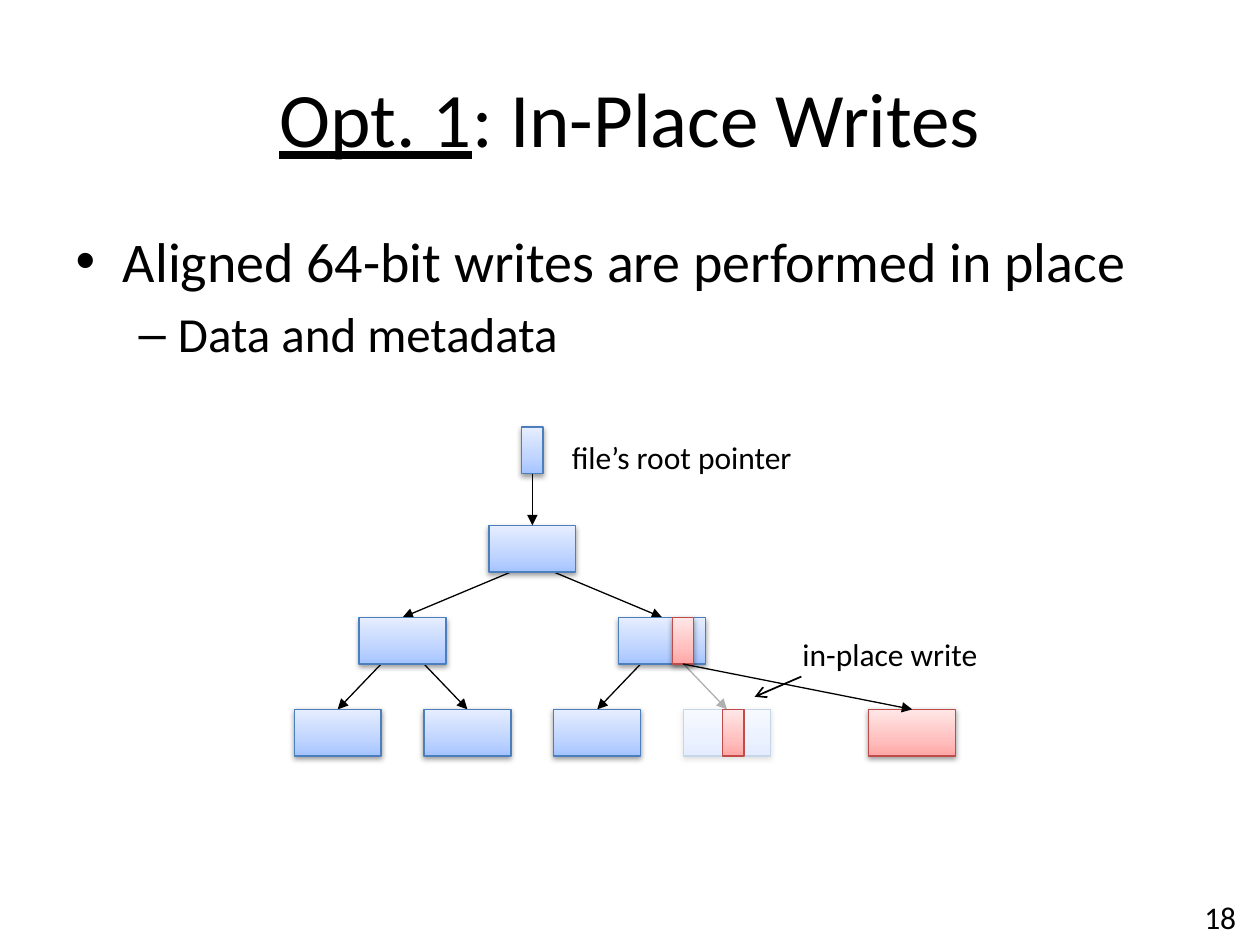
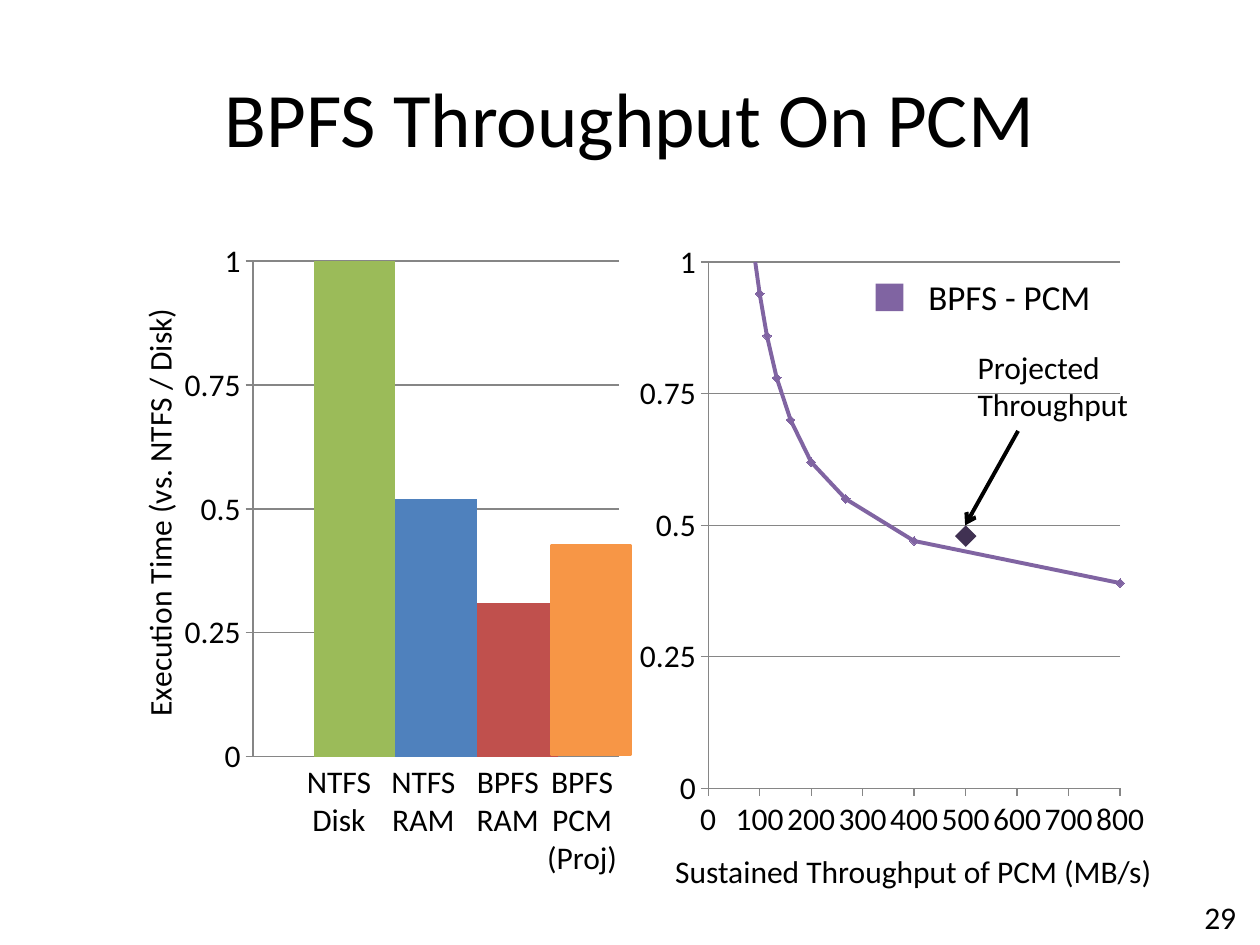
import pptx
import pptx.chart.data
import pptx.dml.color
import pptx.enum.chart
import pptx.enum.shapes
import pptx.enum.text
import pptx.oxml
import pptx.oxml.ns
import pptx.util

RGB = pptx.dml.color.RGBColor
Inches = pptx.util.Inches
Pt = pptx.util.Pt
qn = pptx.oxml.ns.qn
PRESET = pptx.enum.shapes.MSO_SHAPE
ALIGN = pptx.enum.text.PP_ALIGN

FONT = "Calibri"
BLACK = RGB(0x00, 0x00, 0x00)
WHITE = RGB(0xFF, 0xFF, 0xFF)
GRID_GRAY = RGB(0x86, 0x86, 0x86)
GREEN = RGB(0x9B, 0xBB, 0x59)
BLUE = RGB(0x4F, 0x81, 0xBD)
RED = RGB(0xC0, 0x50, 0x4D)
ORANGE = RGB(0xF7, 0x96, 0x46)
PURPLE = RGB(0x80, 0x64, 0xA2)
DARK_PURPLE = RGB(0x40, 0x31, 0x52)
BLUE_EDGE = RGB(0x4B, 0x7E, 0xBC)
RED_EDGE = RGB(0xBF, 0x4C, 0x48)
BLUE_BLOCK = ((RGB(0xA4, 0xC4, 0xFF), RGB(0xBF, 0xD4, 0xFF), RGB(0xE6, 0xEE, 0xFF)), BLUE_EDGE)
RED_BLOCK = ((RGB(0xFF, 0xA6, 0xA5), RGB(0xFF, 0xC0, 0xBF), RGB(0xFF, 0xE7, 0xE7)), RED_EDGE)
STOPS = (0, 35, 100)

# Grid of the block tree, in inches
LEAF_X, LEAF_STEP = 2.68, 1.03
LEVEL_Y, LEVEL_STEP = 4.17, 0.73
BLOCK_W, BLOCK_H, POINTER_W = 0.69, 0.37, 0.17
POINTER_OFFSET = 0.17

THROUGHPUT = (30, 40, 40, 40, 40, 40, 50, 50, 50, 60, 60, 70, 70, 80, 90, 100,
              114, 133, 160, 200, 267, 400, 800)
RELATIVE_TIME = (2.1, 2.03, 1.95, 1.87, 1.79, 1.71, 1.64, 1.56, 1.48, 1.4, 1.32, 1.25,
                 1.17, 1.09, 1.01, 0.94, 0.86, 0.78, 0.7, 0.62, 0.55, 0.47, 0.39)


def xml(tag, **attributes):
    """Make a DrawingML element from a tag such as a:alpha."""
    element = pptx.oxml.parse_xml(
        f'<{tag} xmlns:a="http://schemas.openxmlformats.org/drawingml/2006/main"'
        ' xmlns:c="http://schemas.openxmlformats.org/drawingml/2006/chart"/>')
    for key, value in attributes.items():
        element.set(key, str(value))
    return element


def child(parent, tag, **attributes):
    element = xml(tag, **attributes)
    parent.append(element)
    return element


def add_run(paragraph, text, size, underline=None):
    run = paragraph.add_run()
    run.text = text
    run.font.name = FONT
    run.font.size = Pt(size)
    run.font.color.rgb = BLACK
    run.font.underline = underline


def add_label(slide, box, lines, size=18, align=ALIGN.LEFT, wrap=False):
    label = slide.shapes.add_textbox(*map(Inches, box))
    frame = label.text_frame
    frame.word_wrap = wrap
    if not wrap:
        frame.auto_size = pptx.enum.text.MSO_AUTO_SIZE.SHAPE_TO_FIT_TEXT
    for i, line in enumerate(lines):
        paragraph = frame.add_paragraph() if i else frame.paragraphs[0]
        paragraph.alignment = align
        add_run(paragraph, line, size)


def add_titled_slide(deck, layout, title_runs, page):
    slide = deck.slides.add_slide(deck.slide_layouts[layout])
    paragraph = slide.shapes.title.text_frame.paragraphs[0]
    for text, underline in title_runs:
        add_run(paragraph, text, 44, underline)
    add_label(slide, (7.58, 7.08, 2.33, 0.4), [page], align=ALIGN.RIGHT, wrap=True)
    return slide


def add_flat(slide, box, color, preset=PRESET.RECTANGLE):
    shape = slide.shapes.add_shape(preset, *map(Inches, box))
    shape.shadow.inherit = False
    shape.fill.solid()
    shape.fill.fore_color.rgb = color
    shape.line.fill.background()
    return shape


def add_block(slide, center, top, style=BLUE_BLOCK, width=BLOCK_W, shadow=True):
    """Add a tree block with an upward gradient, centred on a grid column."""
    shades, edge = style
    block = add_flat(slide, (center - width / 2, top, width, BLOCK_H), WHITE)
    block.fill.gradient()
    block.fill.gradient_angle = 90
    stop_list = block.element.spPr.find(".//" + qn("a:gsLst"))
    for stop in list(stop_list):
        stop_list.remove(stop)
    for position, shade in zip(STOPS, shades):
        stop = child(stop_list, "a:gs", pos=position * 1000)
        child(stop, "a:srgbClr", val=shade)
    block.line.color.rgb = edge
    block.line.width = Pt(0.75)
    if shadow:
        effects = block.element.spPr.find(qn("a:effectLst"))
        outer = child(effects, "a:outerShdw", blurRad=Pt(3.1), dist=Pt(1.6),
                      dir=5400000, rotWithShape=0)
        child(child(outer, "a:srgbClr", val=BLACK), "a:alpha", val=38000)


def add_arrow(slide, start, end, width=0.75, head="triangle"):
    arrow = slide.shapes.add_connector(
        pptx.enum.shapes.MSO_CONNECTOR.STRAIGHT, *map(Inches, (*start, *end)))
    arrow.line.color.rgb = BLACK
    arrow.line.width = Pt(width)
    properties = arrow.element.spPr
    child(properties.find(qn("a:ln")), "a:tailEnd", type=head)
    child(properties, "a:effectLst")


def leaf_x(column):
    return LEAF_X + LEAF_STEP * column


def level_y(level):
    return LEVEL_Y + LEVEL_STEP * level


def add_branch(slide, parent, target, level):
    """Point from a block on a level to a block on the next level."""
    side = POINTER_OFFSET if target > parent else -POINTER_OFFSET
    add_arrow(slide, (leaf_x(parent) + side, level_y(level) + BLOCK_H),
              (leaf_x(target), level_y(level + 1)))


def set_layout(parent, index, **shares):
    """Place a chart part by shares of the chart's size."""
    for old in parent.findall(qn("c:layout")):
        parent.remove(old)
    layout = xml("c:layout")
    parent.insert(index, layout)
    manual = child(layout, "c:manualLayout")
    if "w" in shares:
        child(manual, "c:layoutTarget", val="inner")
    for mode in ("xMode", "yMode"):
        child(manual, "c:" + mode, val="edge")
    for key, share in shares.items():
        child(manual, "c:" + key, val=share)


def style_axis(axis, maximum, unit, gridlines):
    axis.minimum_scale, axis.maximum_scale = 0, maximum
    axis.major_unit = unit
    axis.has_major_gridlines = gridlines
    if gridlines:
        axis.major_gridlines.format.line.color.rgb = GRID_GRAY
    axis.major_tick_mark = pptx.enum.chart.XL_TICK_MARK.OUTSIDE
    axis.format.line.color.rgb = GRID_GRAY
    axis.tick_labels.number_format = "General"
    axis.tick_labels.number_format_is_linked = False
    axis.tick_labels.font.size = Pt(18)


def add_plot(slide, kind, box, data, **plot_shares):
    chart = slide.shapes.add_chart(kind, *map(Inches, box), data).chart
    chart.has_legend = chart.has_title = False
    chart.font.name, chart.font.size = FONT, Pt(10)
    chart.font.color.rgb = BLACK
    chart.plots[0].vary_by_categories = False
    style_axis(chart.value_axis, 1, 0.25, True)
    set_layout(chart.element.find(".//" + qn("c:plotArea")), 0, **plot_shares)
    return chart


def add_time_bars(slide):
    data = pptx.chart.data.CategoryChartData()
    data.categories = ["1"]
    bars = ((1, GREEN), (0.52, BLUE), (0.31, RED))
    for i, (value, _) in enumerate(bars, 1):
        data.add_series(f"Series {i}", [value])
    chart = add_plot(slide, pptx.enum.chart.XL_CHART_TYPE.COLUMN_CLUSTERED,
                     (0.75, 1.83, 4.25, 4.42), data, x=0.296, y=0.055, w=0.684, h=0.89)
    chart.plots[0].gap_width, chart.plots[0].overlap = 150, 0
    chart.category_axis.visible = False
    for series, (_, color) in zip(chart.plots[0].series, bars):
        series.format.fill.solid()
        series.format.fill.fore_color.rgb = color
    title = chart.value_axis.axis_title
    paragraph = title.text_frame.paragraphs[0]
    add_run(paragraph, "Execution Time (vs. NTFS / Disk)", 18)
    paragraph.runs[0].font.bold = False
    title.element.find(".//" + qn("a:bodyPr")).set("rot", "-5400000")
    set_layout(title.element, 1, x=0.07, y=0.13)


def add_throughput_curve(slide):
    data = pptx.chart.data.XyChartData()
    points = data.add_series("Series 1")
    for x, y in zip(THROUGHPUT, RELATIVE_TIME):
        points.add_data_point(x, y)
    chart = add_plot(slide, pptx.enum.chart.XL_CHART_TYPE.XY_SCATTER_LINES,
                     (5, 1.83, 4.17, 4.92), data, x=0.149, y=0.051, w=0.784, h=0.849)
    style_axis(chart.category_axis, 800, 100, False)
    curve = chart.plots[0].series[0]
    curve.smooth = False
    curve.format.line.color.rgb = PURPLE
    curve.format.line.width = Pt(2.25)
    curve.marker.style = pptx.enum.chart.XL_MARKER_STYLE.DIAMOND
    curve.marker.size = 5
    curve.marker.format.fill.solid()
    curve.marker.format.fill.fore_color.rgb = PURPLE
    curve.marker.format.line.color.rgb = PURPLE


def build_in_place_writes(deck):
    slide = add_titled_slide(deck, 1, [("Opt. 1", True), (": In-Place Writes", False)], "18")
    body = slide.placeholders[1].text_frame
    add_run(body.paragraphs[0], "Aligned 64-bit writes are performed in place", 32)
    detail = body.add_paragraph()
    detail.level = 1
    add_run(detail, "Data and metadata", 28)

    # The replaced leaf lies under a translucent veil
    add_block(slide, leaf_x(3), level_y(2))
    add_branch(slide, 2.5, 3, 1)
    veil = add_flat(slide, (4.82, 4.45, 2.2, 1.72), WHITE)
    child(veil.element.spPr.find(".//" + qn("a:srgbClr")), "a:alpha", val=69000)

    for parent, target, level in ((1.5, 2.5, 0), (1.5, 0.5, 0), (0.5, 0, 1),
                                  (0.5, 1, 1), (2.5, 2, 1)):
        add_branch(slide, parent, target, level)
    for column, level in ((1.5, 0), (0.5, 1), (2.5, 1), (0, 2), (1, 2), (2, 2)):
        add_block(slide, leaf_x(column), level_y(level))

    root_x, root_y = leaf_x(1.5), 3.39
    add_block(slide, root_x, root_y, width=POINTER_W)
    add_arrow(slide, (root_x, root_y + BLOCK_H), (root_x, level_y(0)))
    add_label(slide, (4.44, 3.43, 1.97, 0.4), ["file’s root pointer"])

    pointer_x, new_leaf_x = 5.42, 7.24
    add_block(slide, 5.82, level_y(2), RED_BLOCK, POINTER_W, shadow=False)
    add_label(slide, (6.27, 4.99, 1.61, 0.4), ["in-place write"])
    add_arrow(slide, (6.36, 5.37), (5.99, 5.53), 1, "arrow")
    add_block(slide, new_leaf_x, level_y(2), RED_BLOCK)
    add_block(slide, pointer_x, level_y(1), RED_BLOCK, POINTER_W)
    add_arrow(slide, (pointer_x, level_y(1) + BLOCK_H), (new_leaf_x, level_y(2)))


def build_throughput(deck):
    slide = add_titled_slide(deck, 5, [("BPFS Throughput On PCM", None)], "29")
    add_time_bars(slide)
    add_throughput_curve(slide)
    add_label(slide, (5.26, 6.71, 4.03, 0.4), ["Sustained Throughput of PCM (MB/s)"])

    add_flat(slide, (7.58, 4.17, 0.17, 0.17), DARK_PURPLE, PRESET.DIAMOND)
    add_arrow(slide, (8.08, 3.42), (7.66, 4.17), 2.25, "arrow")
    add_label(slide, (7.66, 2.71, 1.41, 0.71), ["Projected", "Throughput"])
    add_flat(slide, (6.95, 2.25, 0.22, 0.22), PURPLE)
    add_label(slide, (7.27, 2.14, 1.5, 0.44), ["BPFS - PCM"], 20)

    projected_bar = add_flat(slide, (4.38, 4.33, 0.62, 1.66), ORANGE)
    projected_bar.line.color.rgb = ORANGE
    projected_bar.line.width = Pt(2)
    for i, system in enumerate((("NTFS", "Disk"), ("NTFS", "RAM"), ("BPFS", "RAM"))):
        add_label(slide, (2.33 + 0.67 * i, 6, 0.72, 0.71), system, align=ALIGN.CENTER)
    add_label(slide, (4.24, 6, 0.76, 1.01), ("BPFS", "PCM", "(Proj)"), align=ALIGN.CENTER)


def main():
    deck = pptx.Presentation()
    deck.slide_width, deck.slide_height = Inches(10), Inches(7.5)
    build_in_place_writes(deck)
    build_throughput(deck)
    deck.save("out.pptx")


if __name__ == "__main__":
    main()
